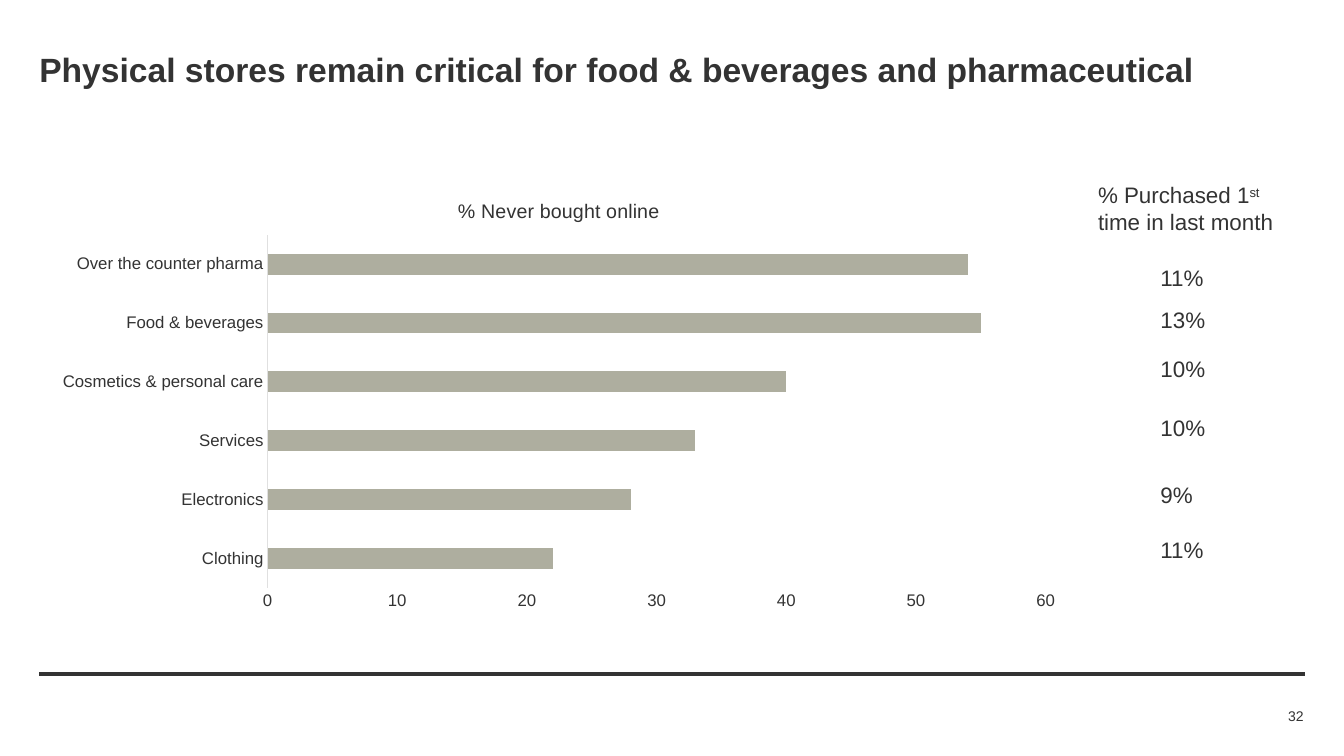
from lxml import etree
from pptx import Presentation
from pptx.chart.data import CategoryChartData
from pptx.dml.color import RGBColor
from pptx.enum.chart import XL_CHART_TYPE as ChartType, XL_TICK_MARK as TickMark
from pptx.enum.shapes import MSO_CONNECTOR as Connector
from pptx.enum.text import MSO_ANCHOR as Anchor, PP_ALIGN as Align
from pptx.oxml import parse_xml
from pptx.oxml.ns import nsdecls, qn
from pptx.util import Inches, Pt


def color(value):
    return RGBColor.from_string(value)


class SlideBuilder:
    font_name = "Arial"
    ink = "333333"
    bar_fill = "AEAE9F"
    axis_line = "E0E0E0"

    def __init__(self, slide):
        self.slide = slide

    def style_font(self, font, size, bold=False):
        font.name = self.font_name
        font.size = Pt(size)
        font.bold = bold
        font.color.rgb = color(self.ink)

    def text(self, left, top, width, height, runs, size=16, bold=False,
             align=Align.LEFT, anchor=Anchor.TOP):
        shape = self.slide.shapes.add_textbox(
            Inches(left), Inches(top), Inches(width), Inches(height))
        frame = shape.text_frame
        frame.word_wrap = True
        frame.margin_left = frame.margin_right = 0
        frame.margin_top = frame.margin_bottom = 0
        frame.vertical_anchor = anchor
        paragraph = frame.paragraphs[0]
        paragraph.alignment = align
        for content, baseline in runs:
            run = paragraph.add_run()
            run.text = content
            self.style_font(run.font, size, bold)
            if baseline:
                run.font._element.set("baseline", str(baseline))

    def rule(self, left, right, top, weight):
        line = self.slide.shapes.add_connector(
            Connector.STRAIGHT, Inches(left), Inches(top), Inches(right), Inches(top))
        line.line.color.rgb = color(self.ink)
        line.line.width = Pt(weight)
        etree.SubElement(line._element.spPr, qn("a:effectLst"))

    def place(self, parent, successors, **position):
        for layout in parent.findall(qn("c:layout")):
            parent.remove(layout)
        target = '<c:layoutTarget val="inner"/>' if "w" in position else ""
        modes = "".join(f'<c:{key}Mode val="edge"/>' for key in "xy")
        values = "".join(f'<c:{key} val="{value}"/>' for key, value in position.items())
        layout = parse_xml(
            f'<c:layout {nsdecls("c")}><c:manualLayout>{target}{modes}{values}'
            "</c:manualLayout></c:layout>")
        parent.insert_element_before(layout, *successors)

    def bar_chart(self, left, top, width, height, title, values):
        data = CategoryChartData()
        data.categories = list(values)
        data.add_series("Series 1", values.values())
        chart = self.slide.shapes.add_chart(
            ChartType.BAR_CLUSTERED, Inches(left), Inches(top),
            Inches(width), Inches(height), data).chart
        self.style_font(chart.font, 10)
        chart.has_legend = False

        chart.has_title = True
        run = chart.chart_title.text_frame.paragraphs[0].add_run()
        run.text = title
        self.style_font(run.font, 14)
        self.place(chart.chart_title._element, ("c:overlay",), x=0.4, y=0.04)

        plot = chart.plots[0]
        plot.gap_width = 182
        plot.vary_by_categories = False
        fill = plot.series[0].format.fill
        fill.solid()
        fill.fore_color.rgb = color(self.bar_fill)

        for axis in (chart.category_axis, chart.value_axis):
            axis.has_major_gridlines = False
            axis.major_tick_mark = axis.minor_tick_mark = TickMark.NONE
            self.style_font(axis.tick_labels.font, 12)
        category_line = chart.category_axis.format.line
        category_line.color.rgb = color(self.axis_line)
        category_line.width = Pt(0.75)
        chart.value_axis.format.line.fill.background()
        chart.value_axis.minimum_scale = 0
        chart.value_axis.maximum_scale = 60
        chart.value_axis.major_unit = 10

        plot_area = chart._chartSpace.chart.plotArea
        for layout in plot_area.findall(qn("c:layout")):
            plot_area.remove(layout)
        self.place(plot_area, ("c:barChart",), x=0.22, y=0.13, w=0.75, h=0.8)


def main():
    presentation = Presentation()
    presentation.slide_width = Inches(13.33)
    presentation.slide_height = Inches(7.5)
    builder = SlideBuilder(
        presentation.slides.add_slide(presentation.slide_layouts[6]))

    builder.rule(0.39, 12.94, 6.69, 3)
    builder.text(
        0.39, 0.47, 12.54, 0.44,
        [("Physical stores remain critical for food & beverages and pharmaceutical", 0)],
        size=24, bold=True, anchor=Anchor.MIDDLE)

    never_bought_online = {
        "Clothing": 22,
        "Electronics": 28,
        "Services": 33,
        "Cosmetics & personal care": 40,
        "Food & beverages": 55,
        "Over the counter pharma": 54,
    }
    builder.bar_chart(0.39, 1.76, 10.29, 4.38, "% Never bought online",
                      never_bought_online)

    builder.text(10.89, 1.8, 1.91, 0.54,
                 [("% Purchased 1", 0), ("st", 30000), (" time in last month", 0)])
    first_purchases = [(2.62, "11%"), (3.04, "13%"), (3.52, "10%"),
                       (4.11, "10%"), (4.77, "9%"), (5.32, "11%")]
    for top, share in first_purchases:
        builder.text(11.51, top, 0.61, 0.27, [(share, 0)])

    builder.text(11.87, 6.99, 1.06, 0.22, [("32", 0)], size=10,
                 align=Align.RIGHT, anchor=Anchor.MIDDLE)
    presentation.save("out.pptx")


if __name__ == "__main__":
    main()
